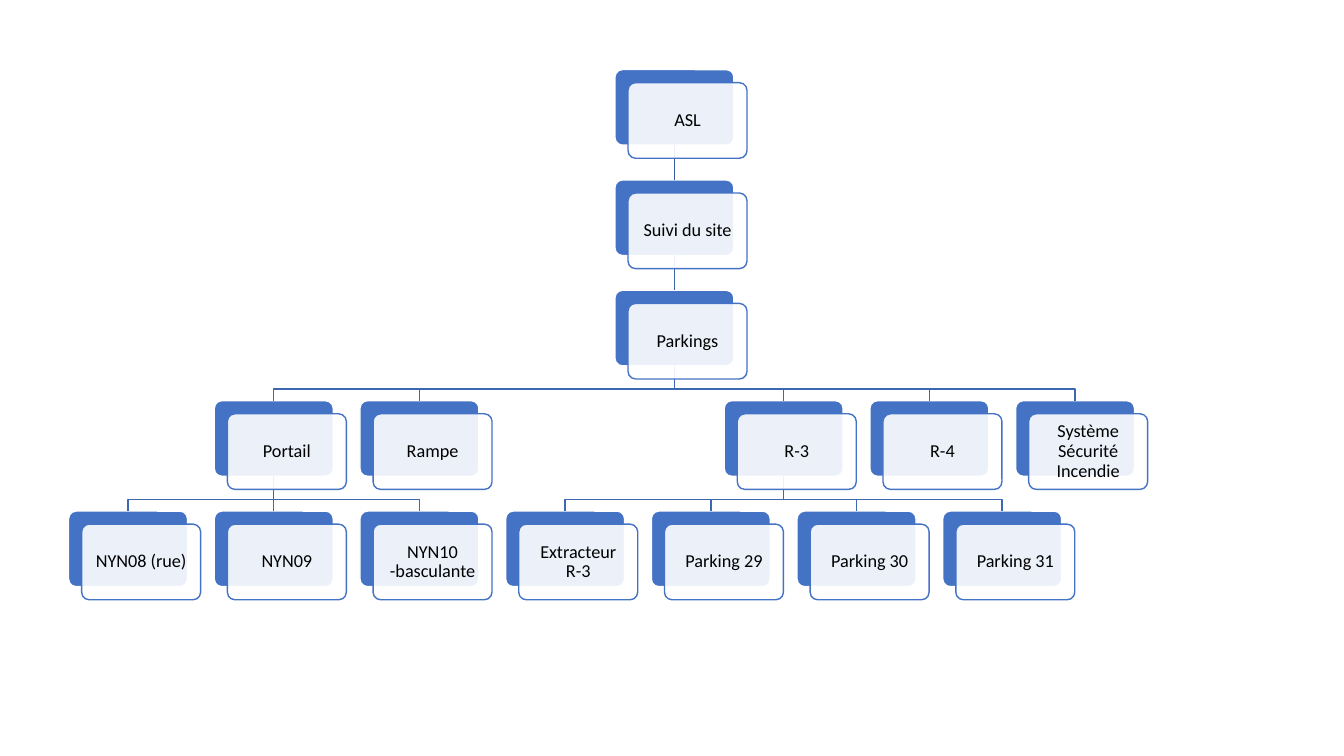
import pptx
import pptx.dml.color
import pptx.enum.shapes
import pptx.enum.text
import pptx.oxml
import pptx.oxml.ns
import pptx.util

Inches = pptx.util.Inches

# Content: label, column, row, index of the parent card
CARDS = [
    ("ASL", 3.75, 0, None),
    ("Suivi du site", 3.75, 1, 0),
    ("Parkings", 3.75, 2, 1),
    ("Portail", 1, 3, 2),
    ("Rampe", 2, 3, 2),
    ("R-3", 4.5, 3, 2),
    ("R-4", 5.5, 3, 2),
    ("Système Sécurité Incendie", 6.5, 3, 2),
    ("NYN08 (rue)", 0, 4, 3),
    ("NYN09", 1, 4, 3),
    ("NYN10 -basculante", 2, 4, 3),
    ("Extracteur\vR-3", 3, 4, 5),
    ("Parking 29", 4, 4, 5),
    ("Parking 30", 5, 4, 5),
    ("Parking 31", 6, 4, 5),
]

# Grid in inches
LEFT, TOP = 0.68, 0.69
COLUMN_STEP, ROW_STEP = 1.445, 1.095
WIDTH, HEIGHT = 1.18, 0.75
OFFSET = 0.13
BEND = 0.23

BLUE, WHITE, BLACK = "4472C4", "FFFFFF", "000000"
ROOT_LINK, LINK = "365B9D", "3E67B2"


def color(target, value):
    target.rgb = pptx.dml.color.RGBColor.from_string(value)


def outline(shape, value):
    color(shape.line.color, value)
    shape.line.width = pptx.util.Pt(1)


def corner(column, row):
    return LEFT + column * COLUMN_STEP, TOP + row * ROW_STEP


def add_card(page, x, y, fill, line):
    card = page.shapes.add_shape(
        pptx.enum.shapes.MSO_SHAPE.ROUNDED_RECTANGLE,
        Inches(x), Inches(y), Inches(WIDTH), Inches(HEIGHT))
    card.adjustments[0] = 0.1
    card.shadow.inherit = False
    card.fill.solid()
    color(card.fill.fore_color, fill)
    outline(card, line)
    return card


def add_straight_link(page, parent, child):
    link = page.shapes.add_connector(
        pptx.enum.shapes.MSO_CONNECTOR.STRAIGHT, 0, 0, 0, 0)
    link.begin_connect(parent, 2)
    link.end_connect(child, 0)
    properties = link._element.spPr
    outline(link, LINK)
    properties.append(pptx.oxml.parse_xml(
        "<a:effectLst %s/>" % pptx.oxml.ns.nsdecls("a")))
    return link


def add_bent_link(page, parent, child):
    start_x, start_y = parent.left + parent.width // 2, parent.top + parent.height
    end_x, bend_y = child.left + child.width // 2, start_y + Inches(BEND)
    builder = page.shapes.build_freeform(start_x, start_y)
    builder.add_line_segments(
        [(start_x, bend_y), (end_x, bend_y), (end_x, child.top)], close=False)
    link = builder.convert_to_shape()
    link.shadow.inherit = False
    link.fill.background()
    outline(link, LINK)


def add_label(card, text):
    frame = card.text_frame
    frame.word_wrap = True
    frame.vertical_anchor = pptx.enum.text.MSO_ANCHOR.MIDDLE
    frame.margin_left = frame.margin_right = Inches(0.07)
    frame.margin_top = frame.margin_bottom = Inches(0.05)
    frame.text = text
    para = frame.paragraphs[0]
    para.alignment = pptx.enum.text.PP_ALIGN.CENTER
    para.line_spacing = 0.9
    for span in para.runs:
        span.font.name = "Calibri"
        span.font.size = pptx.util.Pt(13)
        color(span.font.color, BLACK)


def main():
    deck = pptx.Presentation()
    deck.slide_width, deck.slide_height = Inches(13.33), Inches(7.5)
    page = deck.slides.add_slide(deck.slide_layouts[6])

    # Blue cards at the back
    backs = [add_card(page, *corner(column, row), BLUE, WHITE)
             for _, column, row, _ in CARDS]

    # Links from each parent to its children
    for back, (_, column, _, parent) in zip(backs, CARDS):
        if parent is None:
            continue
        if column == CARDS[parent][1]:
            link = add_straight_link(page, backs[parent], back)
            if parent == 0:
                outline(link, ROOT_LINK)
        else:
            add_bent_link(page, backs[parent], back)

    # Translucent white cards with the labels
    for text, column, row, _ in CARDS:
        x, y = corner(column, row)
        front = add_card(page, x + OFFSET, y + OFFSET, WHITE, BLUE)
        fill = front._element.spPr.find(pptx.oxml.ns.qn("a:solidFill"))
        fill[0].append(pptx.oxml.parse_xml(
            '<a:alpha %s val="90000"/>' % pptx.oxml.ns.nsdecls("a")))
        add_label(front, text)

    deck.save("out.pptx")


if __name__ == "__main__":
    main()
